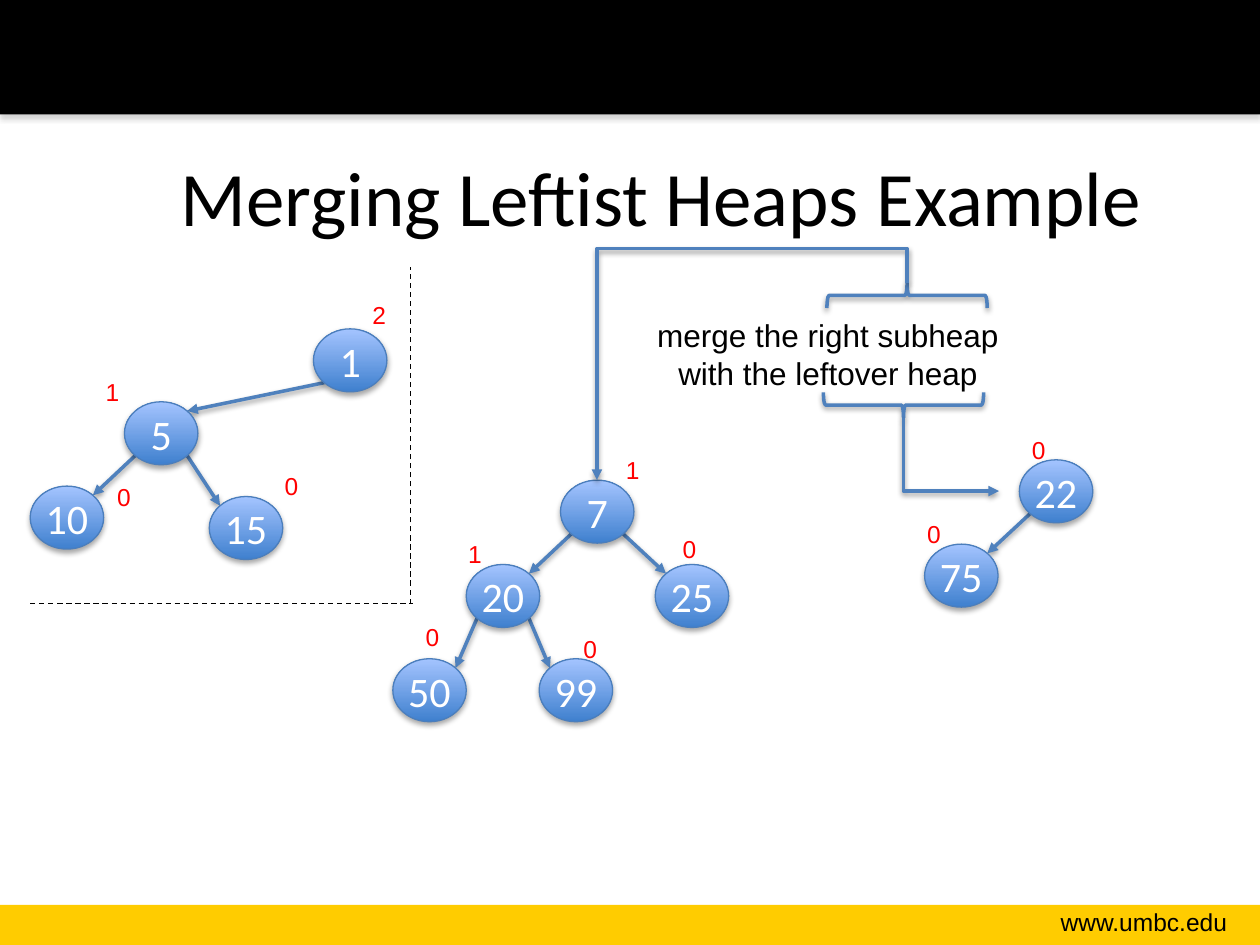
from lxml import etree
from pptx import Presentation
from pptx import util as u
from pptx.dml import color
from pptx.enum import dml, shapes, text
from pptx.oxml import ns

BLACK = color.RGBColor(0x00, 0x00, 0x00)
WHITE = color.RGBColor(0xFF, 0xFF, 0xFF)
RED = color.RGBColor(0xFF, 0x00, 0x00)
GOLD = color.RGBColor(0xFF, 0xCC, 0x00)
GRAY = color.RGBColor(0x80, 0x80, 0x80)
BLUE = color.RGBColor(0x4F, 0x81, 0xBD)
NODE_LINE = color.RGBColor(0x4B, 0x7E, 0xBC)
NODE_DARK = color.RGBColor(0x3F, 0x80, 0xCE)
NODE_LIGHT = color.RGBColor(0xA4, 0xC4, 0xFF)

NODE_WIDTH, NODE_HEIGHT = 1.48, 1.27
DIAGONAL = 0.5 ** 0.5 / 2  # offset of an ellipse's diagonal points, per unit size

# value: node left, top; rank label left, top (cm)
NODES = {
    1: (6.32, 6.63, 7.26, 5.92),
    5: (2.51, 8.1, 1.88, 7.47),
    10: (0.61, 9.8, 2.11, 9.6),
    15: (4.22, 10.01, 5.49, 9.37),
    7: (11.3, 9.68, 12.37, 9.04),
    20: (9.4, 11.38, 9.19, 10.74),
    25: (13.21, 11.38, 13.51, 10.64),
    50: (7.92, 13.28, 8.33, 12.42),
    99: (10.87, 13.28, 11.51, 12.65),
    22: (20.55, 9.27, 20.55, 8.64),
    75: (18.64, 10.97, 18.44, 10.34),
}
RANKS = {1: 2, 5: 1, 7: 1, 20: 1}  # every other node has rank 0
# parent: left child, right child
CHILDREN = {1: (5, None), 5: (10, 15), 7: (20, 25), 20: (50, 99), 22: (75, None)}


class HeapSlide:
    def __init__(self, slide):
        self.slide = slide

    def set_font(self, paragraph, size, font_color, name="Arial"):
        paragraph.font.size = u.Pt(size)
        paragraph.font.name = name
        paragraph.font.color.rgb = font_color

    def set_shadow(self, shape, shadow_color=None, alpha=35, distance=23000):
        """Add a soft shadow below, or none when no colour is given."""
        effects = etree.SubElement(shape.element.spPr, ns.qn("a:effectLst"))
        if shadow_color is None:
            return
        shadow = etree.SubElement(effects, ns.qn("a:outerShdw"), blurRad="40000",
                                  dist=str(distance), dir="5400000", rotWithShape="0")
        rgb = etree.SubElement(shadow, ns.qn("a:srgbClr"), val=str(shadow_color))
        etree.SubElement(rgb, ns.qn("a:alpha"), val=str(alpha * 1000))

    def title(self, words, left, top, width, height):
        title = self.slide.shapes.title
        title.left, title.top = u.Cm(left), u.Cm(top)
        title.width, title.height = u.Cm(width), u.Cm(height)
        title.text_frame.text = words
        title.text_frame.vertical_anchor = text.MSO_ANCHOR.MIDDLE
        paragraph = title.text_frame.paragraphs[0]
        paragraph.alignment = text.PP_ALIGN.CENTER
        self.set_font(paragraph, 44, BLACK, "Calibri")

    def shape(self, kind, left, top, width, height):
        return self.slide.shapes.add_shape(
            kind, u.Cm(left), u.Cm(top), u.Cm(width), u.Cm(height))

    def band(self, top, height, fill_color, shadow_color=None):
        band = self.shape(shapes.MSO_SHAPE.RECTANGLE, 0, top, 25.4, height)
        band.fill.solid()
        band.fill.fore_color.rgb = fill_color
        band.line.fill.background()
        self.set_shadow(band, shadow_color)

    def label(self, lines, left, top, width, height, size, font_color,
              alignments=(text.PP_ALIGN.LEFT,), wrap=True):
        box = self.slide.shapes.add_textbox(
            u.Cm(left), u.Cm(top), u.Cm(width), u.Cm(height))
        frame = box.text_frame
        frame.text = "\n".join(lines)
        frame.word_wrap = wrap
        frame.auto_size = text.MSO_AUTO_SIZE.SHAPE_TO_FIT_TEXT
        for paragraph, alignment in zip(frame.paragraphs, alignments):
            paragraph.alignment = alignment
            self.set_font(paragraph, size, font_color)

    def node(self, value, left, top):
        node = self.shape(shapes.MSO_SHAPE.OVAL, left, top, NODE_WIDTH, NODE_HEIGHT)
        node.fill.gradient()
        node.fill.gradient_angle = 90
        for stop, stop_color in zip(node.fill.gradient_stops, (NODE_DARK, NODE_LIGHT)):
            stop.color.rgb = stop_color
        node.line.color.rgb = NODE_LINE
        node.line.width = u.Pt(0.75)
        self.set_shadow(node, BLACK)
        frame = node.text_frame
        frame.text = str(value)
        frame.word_wrap = False
        frame.vertical_anchor = text.MSO_ANCHOR.MIDDLE
        frame.paragraphs[0].alignment = text.PP_ALIGN.CENTER
        self.set_font(frame.paragraphs[0], 24, WHITE, "Calibri")

    def connector(self, kind, x1, y1, x2, y2):
        return self.slide.shapes.add_connector(
            kind, u.Cm(x1), u.Cm(y1), u.Cm(x2), u.Cm(y2))

    def style_blue(self, shape):
        shape.line.color.rgb = BLUE
        shape.line.width = u.Pt(2)
        self.set_shadow(shape, BLACK, 38, 20000)

    def add_arrowhead(self, connector):
        line = connector.element.spPr.find(ns.qn("a:ln"))
        etree.SubElement(line, ns.qn("a:tailEnd"), type="triangle")

    def edge(self, parent, child, side):
        """Arrow from a parent to its left (side -1) or right (side 1) child."""
        dx, dy = side * DIAGONAL * NODE_WIDTH, DIAGONAL * NODE_HEIGHT
        (x1, y1), (x2, y2) = (
            (NODES[value][0] + NODE_WIDTH / 2, NODES[value][1] + NODE_HEIGHT / 2)
            for value in (parent, child))
        edge = self.connector(shapes.MSO_CONNECTOR.STRAIGHT,
                              x1 + dx, y1 + dy, x2 - dx, y2 - dy)
        self.style_blue(edge)
        self.add_arrowhead(edge)

    def elbow(self, preset, left, top, width, height, flips, adjustment=None):
        """Bent arrow in a frame that is turned by 270 degrees."""
        elbow = self.connector(shapes.MSO_CONNECTOR.ELBOW,
                               left, top, left + width, top + height)
        properties = elbow.element.spPr
        frame = properties.find(ns.qn("a:xfrm"))
        frame.set("rot", "16200000")
        for flip in flips:
            frame.set(flip, "1")
        geometry = properties.find(ns.qn("a:prstGeom"))
        geometry.set("prst", preset)
        if adjustment is not None:
            etree.SubElement(geometry.find(ns.qn("a:avLst")), ns.qn("a:gd"),
                             name="adj1", fmla=f"val {adjustment}")
        self.style_blue(elbow)
        self.add_arrowhead(elbow)

    def brace(self, left, top, rotation):
        brace = self.shape(shapes.MSO_SHAPE.LEFT_BRACE, left, top, 0.51, 3.23)
        brace.rotation = rotation
        brace.fill.background()
        self.style_blue(brace)

    def dashed_line(self, x1, y1, x2, y2):
        line = self.connector(shapes.MSO_CONNECTOR.STRAIGHT, x1, y1, x2, y2)
        line.line.color.rgb = BLACK
        line.line.width = u.Pt(0.75)
        line.line.dash_style = dml.MSO_LINE.DASH
        self.set_shadow(line)


def main():
    presentation = Presentation()
    presentation.slide_width, presentation.slide_height = u.Cm(25.4), u.Cm(19.05)
    page = HeapSlide(presentation.slides.add_slide(presentation.slide_layouts[5]))

    # Bands, web address and title
    page.band(18.24, 0.81, GOLD)
    page.band(0, 2.31, BLACK, GRAY)
    page.label(["www.umbc.edu"], 19.94, 18.16, 5.05, 0.86, 14, BLACK,
               [text.PP_ALIGN.RIGHT])
    page.title("Merging Leftist Heaps Example", 1.9, 2.36, 22.86, 3.18)

    # Heaps
    for parent, children in CHILDREN.items():
        for child, side in zip(children, (-1, 1)):
            if child:
                page.edge(parent, child, side)
    for value, (left, top, rank_left, rank_top) in NODES.items():
        page.node(value, left, top)
        page.label([str(RANKS.get(value, 0))], rank_left, rank_top, 0.74, 0.86, 14, RED)

    # Merge note with braces and arrows to both heaps
    page.label(["merge the right subheap", "with the leftover heap"],
               13, 6.25, 7.65, 1.8, 18, BLACK,
               [text.PP_ALIGN.LEFT, text.PP_ALIGN.CENTER], wrap=False)
    page.brace(18.03, 4.34, 90)
    page.elbow("bentConnector3", 13.18, 4.57, 3.96, 6.25, ("flipH", "flipV"), -17800)
    page.brace(17.96, 6.55, 270)
    page.elbow("bentConnector2", 18.44, 8.2, 1.47, 1.93, ("flipH",))

    # Border of the finished part
    page.dashed_line(0.61, 12.17, 8.33, 12.17)
    page.dashed_line(8.28, 12.17, 8.28, 5.38)

    presentation.save("out.pptx")


if __name__ == "__main__":
    main()
